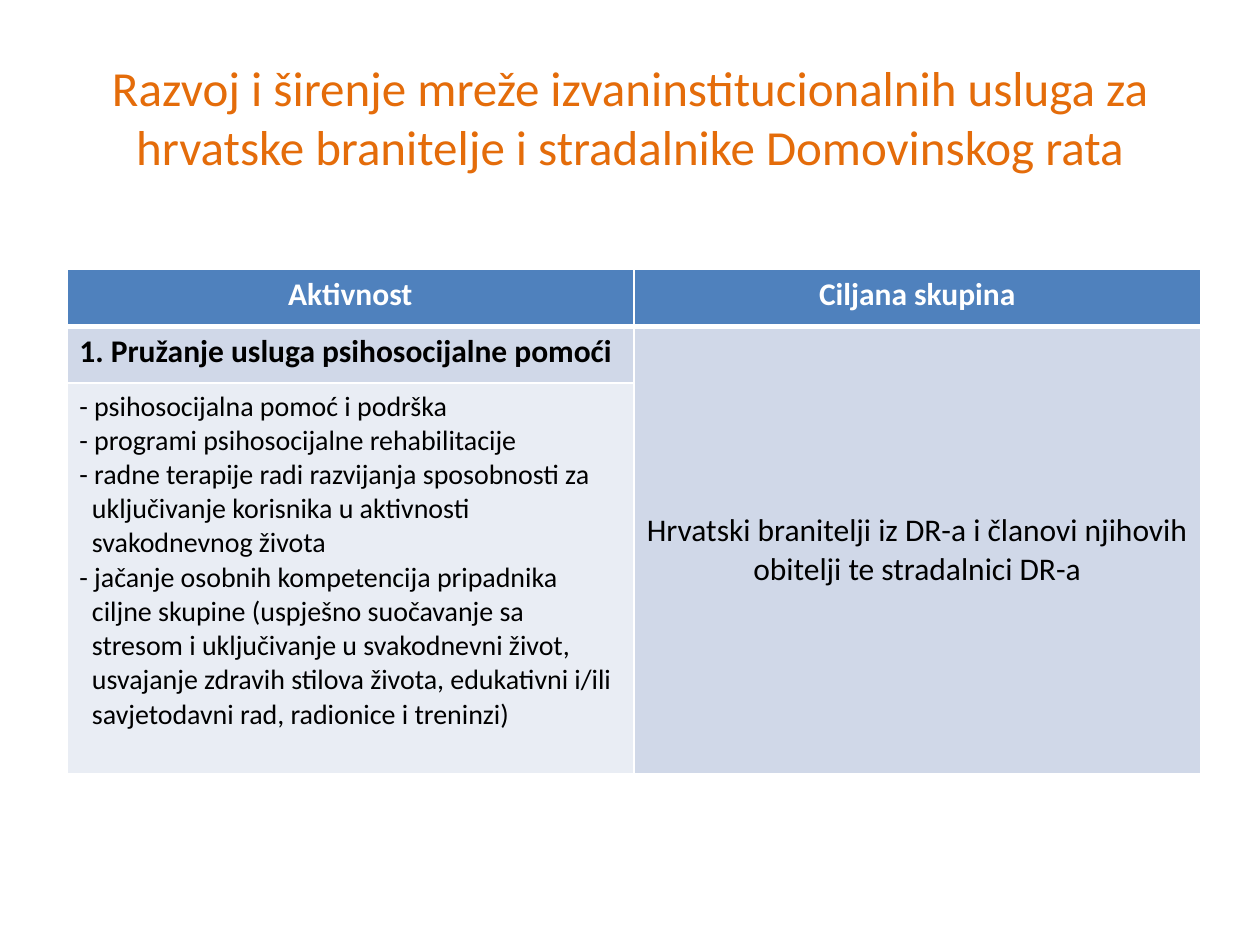
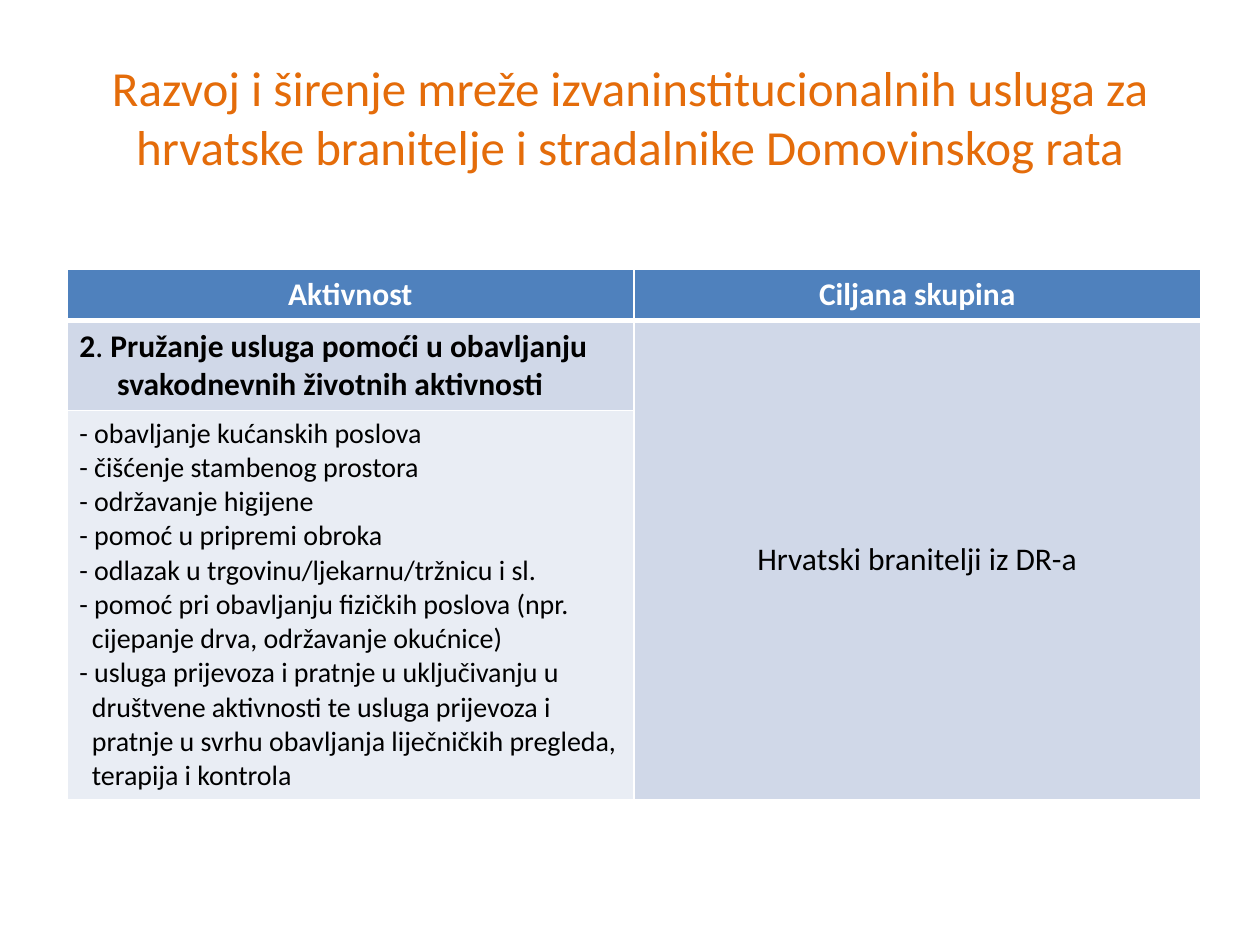
import pptx
import pptx.dml.color
import pptx.enum.text
import pptx.oxml
import pptx.oxml.ns
import pptx.util
from dataclasses import dataclass

Inches = pptx.util.Inches
Pt = pptx.util.Pt
ALIGN = pptx.enum.text.PP_ALIGN
ANCHOR = pptx.enum.text.MSO_ANCHOR


# Colours and type sizes
@dataclass(frozen=True)
class Theme:
    font: str = "Calibri"
    title: str = "E46C0A"
    header: str = "4F81BD"
    band: str = "D0D8E8"
    pale: str = "E9EDF4"
    white: str = "FFFFFF"
    black: str = "000000"
    title_size: int = 28
    cell_size: int = 18
    list_size: int = 16
    rule: int = 1
    header_rule: int = 3


TITLE = ("Razvoj i širenje mreže izvaninstitucionalnih usluga za "
         "hrvatske branitelje i stradalnike Domovinskog rata")
HEADERS = ["Aktivnost", "Ciljana skupina"]
LIST_HANG = 0.1

# Each heading is a list of (text, bold); each item is (text, hanging indent)
SERVICES = [
    {
        "heading": [("1. Pružanje usluga psihosocijalne pomoći", True)],
        "heading_hang": 0,
        "items": [
            ("- psihosocijalna pomoć i podrška", 0),
            ("- programi psihosocijalne rehabilitacije", 0),
            ("- radne terapije radi razvijanja sposobnosti za uključivanje "
             "korisnika u aktivnosti svakodnevnog života", LIST_HANG),
            ("- jačanje osobnih kompetencija pripadnika ciljne skupine "
             "(uspješno suočavanje sa stresom i uključivanje u svakodnevni "
             "život, usvajanje zdravih stilova života, edukativni i/ili "
             "savjetodavni rad, radionice i treninzi)", LIST_HANG),
        ],
        "group": "Hrvatski branitelji iz DR-a i članovi njihovih obitelji "
                 "te stradalnici DR-a",
        "rows": [0.45, 0.45, 3.1],
    },
    {
        "heading": [("2", True), (". ", False),
                    ("Pružanje usluga pomoći u obavljanju svakodnevnih "
                     "životnih aktivnosti", True)],
        "heading_hang": 0.3,
        "items": [
            ("- obavljanje kućanskih poslova", 0),
            ("- čišćenje stambenog prostora", 0),
            ("- održavanje higijene", 0),
            ("- pomoć u pripremi obroka", 0),
            ("- odlazak u trgovinu/ljekarnu/tržnicu i sl.", 0),
            ("- pomoć pri obavljanju fizičkih poslova (npr. cijepanje drva, "
             "održavanje okućnice)", LIST_HANG),
            ("- usluga prijevoza i pratnje u uključivanju u društvene "
             "aktivnosti te usluga prijevoza i pratnje u svrhu obavljanja "
             "liječničkih pregleda, terapija i kontrola", LIST_HANG),
        ],
        "group": "Hrvatski branitelji iz DR-a",
        "rows": [0.4, 0.7, 3.05],
    },
]


class Builder:
    def __init__(self, theme):
        self.theme = theme
        self.deck = pptx.Presentation()
        self.deck.slide_width = Inches(10)
        self.deck.slide_height = Inches(7.5)
        self.page = None

    def new_page(self):
        layout = self.deck.slide_layouts.get_by_name("Title Only")
        self.page = self.deck.slides.add_slide(layout)

    def fill_text(self, frame, paragraphs, size, color, align=ALIGN.LEFT):
        """Fill a frame with paragraphs given as (spans, hanging indent)."""
        for index, (spans, hang) in enumerate(paragraphs):
            para = frame.add_paragraph() if index else frame.paragraphs[0]
            para.alignment = align
            if hang:
                properties = para._p.get_or_add_pPr()
                properties.set("marL", str(Inches(hang)))
                properties.set("indent", str(-Inches(hang)))
            for text, bold in spans:
                span = para.add_run()
                span.text = text
                values = {"name": self.theme.font, "size": Pt(size), "bold": bold}
                for name, value in values.items():
                    setattr(span.font, name, value)
                span.font.color.rgb = pptx.dml.color.RGBColor.from_string(color)

    def title(self, text):
        box = self.page.shapes.title
        place = {"left": 0.5, "top": 0.3, "width": 9, "height": 1.25}
        for name, value in place.items():
            setattr(box, name, Inches(value))
        frame = box.text_frame
        layout = {"word_wrap": True, "vertical_anchor": ANCHOR.MIDDLE,
                  "auto_size": pptx.enum.text.MSO_AUTO_SIZE.NONE}
        for name, value in layout.items():
            setattr(frame, name, value)
        self.fill_text(frame, [([(text, False)], 0)], self.theme.title_size,
                       self.theme.title, ALIGN.CENTER)

    def style_cell(self, cell, fill, top, bottom):
        """Draw white borders, then fill the cell."""
        properties = cell._tc.get_or_add_tcPr()
        rule = self.theme.rule
        for side, width in {"L": rule, "R": rule, "T": top, "B": bottom}.items():
            properties.append(pptx.oxml.parse_xml(
                f'<a:ln{side} {pptx.oxml.ns.nsdecls("a")} w="{Pt(width)}">'
                f'<a:solidFill><a:srgbClr val="{self.theme.white}"/></a:solidFill>'
                f'</a:ln{side}>'))
        cell.fill.solid()
        cell.fill.fore_color.rgb = pptx.dml.color.RGBColor.from_string(fill)

    def table(self, service):
        theme = self.theme
        heights = service["rows"]
        table = self.page.shapes.add_table(
            len(heights), len(HEADERS), Inches(0.53), Inches(2.14),
            Inches(9), Inches(sum(heights))).table
        table.horz_banding = False
        for row, height in zip(table.rows, heights):
            row.height = Inches(height)

        # Fills and borders
        for row in range(len(heights)):
            for column in range(len(HEADERS)):
                fill = theme.header if row == 0 else theme.band
                if (row, column) == (2, 0):
                    fill = theme.pale
                self.style_cell(table.cell(row, column), fill,
                                theme.header_rule if row == 1 else theme.rule,
                                theme.header_rule if row == 0 else theme.rule)

        # Header row
        for column, text in enumerate(HEADERS):
            self.fill_text(table.cell(0, column).text_frame, [([(text, True)], 0)],
                           theme.cell_size, theme.white, ALIGN.CENTER)

        # Activity column
        self.fill_text(table.cell(1, 0).text_frame,
                       [(service["heading"], service["heading_hang"])],
                       theme.cell_size, theme.black)
        self.fill_text(table.cell(2, 0).text_frame,
                       [([(text, False)], hang) for text, hang in service["items"]],
                       theme.list_size, theme.black)

        # Target group, merged over both activity rows
        group = table.cell(1, 1)
        group.merge(table.cell(2, 1))
        group.vertical_anchor = ANCHOR.MIDDLE
        self.fill_text(group.text_frame, [([(service["group"], False)], 0)],
                       theme.cell_size, theme.black, ALIGN.CENTER)


def main():
    builder = Builder(Theme())
    for service in SERVICES:
        builder.new_page()
        builder.title(TITLE)
        builder.table(service)
    builder.deck.save("out.pptx")


if __name__ == "__main__":
    main()
